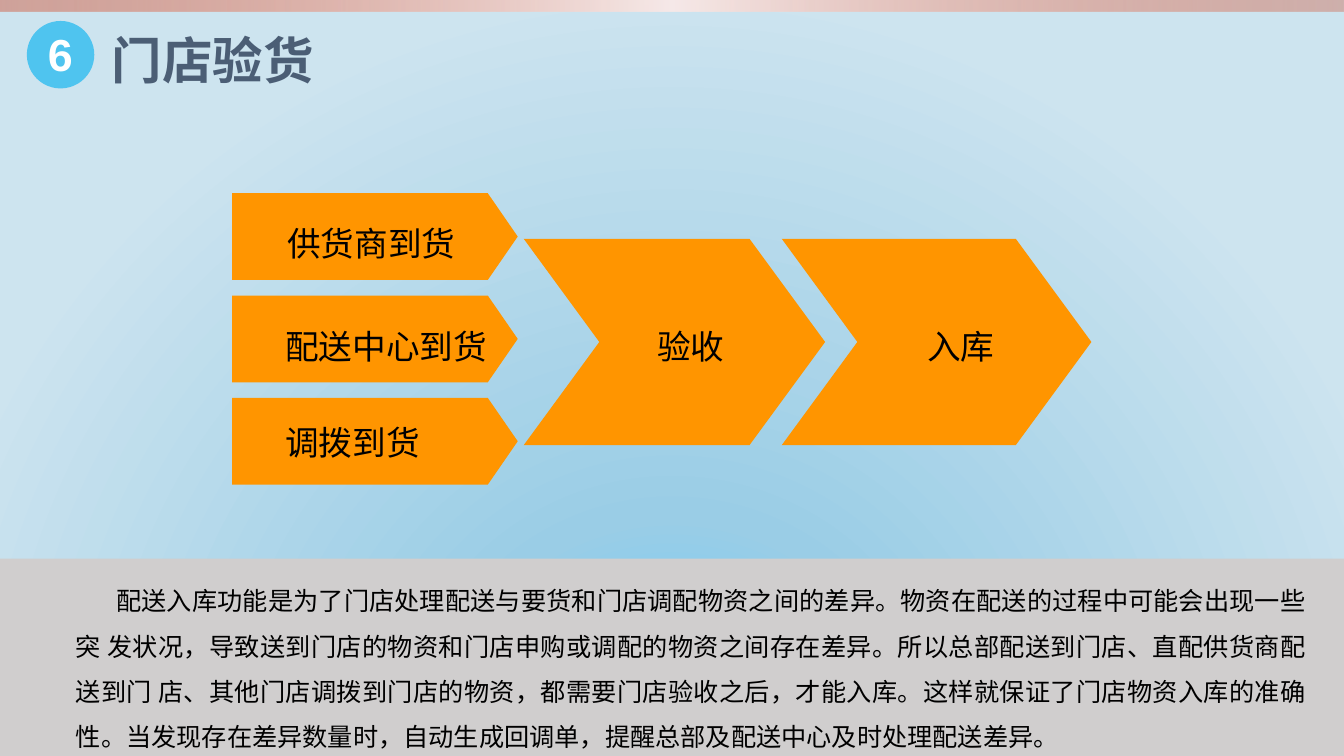
"""Build the store goods-acceptance slide."""
import pptx
import pptx.util
import pptx.dml.color
import pptx.enum.shapes
import pptx.enum.text
import pptx.oxml.ns
from lxml import etree

Pt = pptx.util.Pt
RGBColor = pptx.dml.color.RGBColor
Shape = pptx.enum.shapes.MSO_SHAPE
Align = pptx.enum.text.PP_ALIGN
qn = pptx.oxml.ns.qn

ORANGE = RGBColor(0xFF, 0x95, 0x00)
GREY = RGBColor(0xD0, 0xCE, 0xCE)
SKY = RGBColor(0x00, 0xB0, 0xF0)
SLATE = RGBColor(0x4B, 0x5E, 0x75)
BLACK = RGBColor(0, 0, 0)
WHITE = RGBColor(0xFF, 0xFF, 0xFF)
BACKGROUND_STOPS = [
    (0, RGBColor(0x63, 0xCA, 0xFD), 100),
    (31, RGBColor(0x9A, 0xCD, 0xE6), 100),
    (100, RGBColor(0xCD, 0xE4, 0xEF), 100),
]
BAR_STOPS = [
    (0, RGBColor(0xD1, 0x63, 0x49), 50),
    (50, RGBColor(0xF7, 0xEA, 0xE9), 100),
    (100, RGBColor(0xD1, 0x63, 0x49), 40),
]

SANS, LATIN = "Noto Sans CJK SC", "Arial"
WIDTH, HEIGHT = 960, 540
TITLE = "门店验货"
NUMBER = "6"
ARRIVALS = [
    ("供货商到货", LATIN, 205.2, 159.1),
    ("配送中心到货", SANS, 203.8, 232.6),
    ("调拨到货", SANS, 203.8, 301.7),
]
STEPS = [
    ("验收", 374.1, 215.3, 469.4),
    ("入库", 558.4, 221.2, 662.4),
]
BODY = (
    "配送入库功能是为了门店处理配送与要货和门店调配物资之间的差异。"
    "物资在配送的过程中可能会出现一些突 发状况，"
    "导致送到门店的物资和门店申购或调配的物资之间存在差异。"
    "所以总部配送到门店、直配供货商配送到门 店、其他门店调拨到门店的物资，"
    "都需要门店验收之后，才能入库。这样就保证了门店物资入库的准确性。"
    "当发现存在差异数量时，自动生成回调单，提醒总部及配送中心及时处理配送差异。"
)
ARRIVAL_LEFT, ARRIVAL_TOP, ARRIVAL_PITCH = 165.8, 138, 73.1
ARRIVAL_WIDTH, ARRIVAL_HEIGHT, ARRIVAL_TIP = 204, 62, 21.4
STEP_TOP, STEP_HEIGHT, STEP_TIP = 170.6, 147.4, 54
STEP_LABEL_TOP = 232.6
PANEL_TOP = 399


def set_gradient(fill, properties, stops, shading, **settings):
    """Give an element a gradient and return its shading element."""
    fill.gradient()
    gradient = properties.find(qn("a:gradFill"))
    gradient.clear()
    gradient.set("rotWithShape", "1")
    stop_list = etree.SubElement(gradient, qn("a:gsLst"))
    for position, color, opacity in stops:
        stop = etree.SubElement(stop_list, qn("a:gs"), pos=str(position * 1000))
        tint = etree.SubElement(stop, qn("a:srgbClr"), val=str(color))
        etree.SubElement(tint, qn("a:alpha"), val=str(opacity * 1000))
    return etree.SubElement(gradient, qn(shading), **settings)


def add_block(page, kind, left, top, width, height, color):
    """Add a plain filled shape."""
    shape = page.shapes.add_shape(kind, Pt(left), Pt(top), Pt(width), Pt(height))
    shape.shadow.inherit = False
    shape.line.fill.background()
    shape.fill.solid()
    shape.fill.fore_color.rgb = color
    return shape


def write(box, text, font, size, color, bold=False, align=Align.LEFT):
    """Write one run into a text frame and return its paragraph."""
    box.text_frame.word_wrap = True
    box.text_frame.vertical_anchor = pptx.enum.text.MSO_ANCHOR.TOP
    para = box.text_frame.paragraphs[0]
    para.alignment = align
    span = para.add_run()
    span.text = text
    span.font.name = font
    span.font.size = Pt(size)
    span.font.bold = bold
    span.font.color.rgb = color
    east_asian = etree.Element(qn("a:ea"), typeface=SANS)
    span.font._element.find(qn("a:latin")).addnext(east_asian)
    return para


def add_box(page, left, top, width, height, margin=0):
    """Add a text box with even margins."""
    box = page.shapes.add_textbox(Pt(left), Pt(top), Pt(width), Pt(height))
    frame = box.text_frame
    frame.margin_left = frame.margin_right = Pt(margin)
    frame.margin_top = frame.margin_bottom = Pt(margin / 2)
    return box


def add_label(page, text, font, left, top):
    """Add a process label."""
    write(add_box(page, left, top, 165, 28.8), text, font, 24, BLACK)


def main():
    """Assemble and save the deck."""
    deck = pptx.Presentation()
    deck.slide_width, deck.slide_height = Pt(WIDTH), Pt(HEIGHT)
    page = deck.slides.add_slide(deck.slide_layouts[5])

    fill = page.background.fill
    fill.gradient()
    properties = page.element.find(".//" + qn("p:bgPr"))
    glow = set_gradient(fill, properties, BACKGROUND_STOPS, "a:path", path="circle")
    etree.SubElement(glow, qn("a:fillToRect"), l="50000", t="150000", r="50000", b="0")

    bar = add_block(page, Shape.RECTANGLE, 0, 0, WIDTH, 8.5, WHITE)
    set_gradient(bar.fill, bar.element.spPr, BAR_STOPS, "a:lin", ang="0", scaled="0")

    title = page.shapes.title
    title.left, title.top, title.width, title.height = Pt(72.7), Pt(17.3), Pt(887), Pt(85)
    write(title, TITLE, LATIN, 36, SLATE, bold=True)

    for row, (text, font, left, top) in enumerate(ARRIVALS):
        arrow = add_block(page, Shape.PENTAGON, ARRIVAL_LEFT,
                          ARRIVAL_TOP + row * ARRIVAL_PITCH,
                          ARRIVAL_WIDTH, ARRIVAL_HEIGHT, ORANGE)
        arrow.adjustments[0] = ARRIVAL_TIP / ARRIVAL_HEIGHT
        add_label(page, text, font, left, top)

    for text, left, width, label_left in STEPS:
        arrow = add_block(page, Shape.CHEVRON, left, STEP_TOP, width, STEP_HEIGHT, ORANGE)
        arrow.adjustments[0] = STEP_TIP / STEP_HEIGHT
        add_label(page, text, SANS, label_left, STEP_LABEL_TOP)

    add_block(page, Shape.RECTANGLE, 0, PANEL_TOP, WIDTH, HEIGHT - PANEL_TOP, GREY)
    box = add_box(page, 53.3, 407.5, 879.8, 126.7)
    para = write(box, BODY, SANS, 18, BLACK, align=Align.JUSTIFY)
    para.line_spacing = 1.5
    indents = para._p.get_or_add_pPr()
    indents.set("marL", str(Pt(0.9)))
    indents.set("indent", str(Pt(28.8)))

    badge = add_block(page, Shape.OVAL, 19.2, 15, 48.2, 48.2, SKY)
    tint = badge.element.spPr.find(qn("a:solidFill"))[0]
    etree.SubElement(tint, qn("a:alpha"), val="61000")
    box = add_box(page, 24.5, 15.8, 37.4, 46, margin=7.2)
    write(box, NUMBER, LATIN, 32, WHITE, bold=True, align=Align.CENTER)

    deck.save("out.pptx")


if __name__ == "__main__":
    main()
